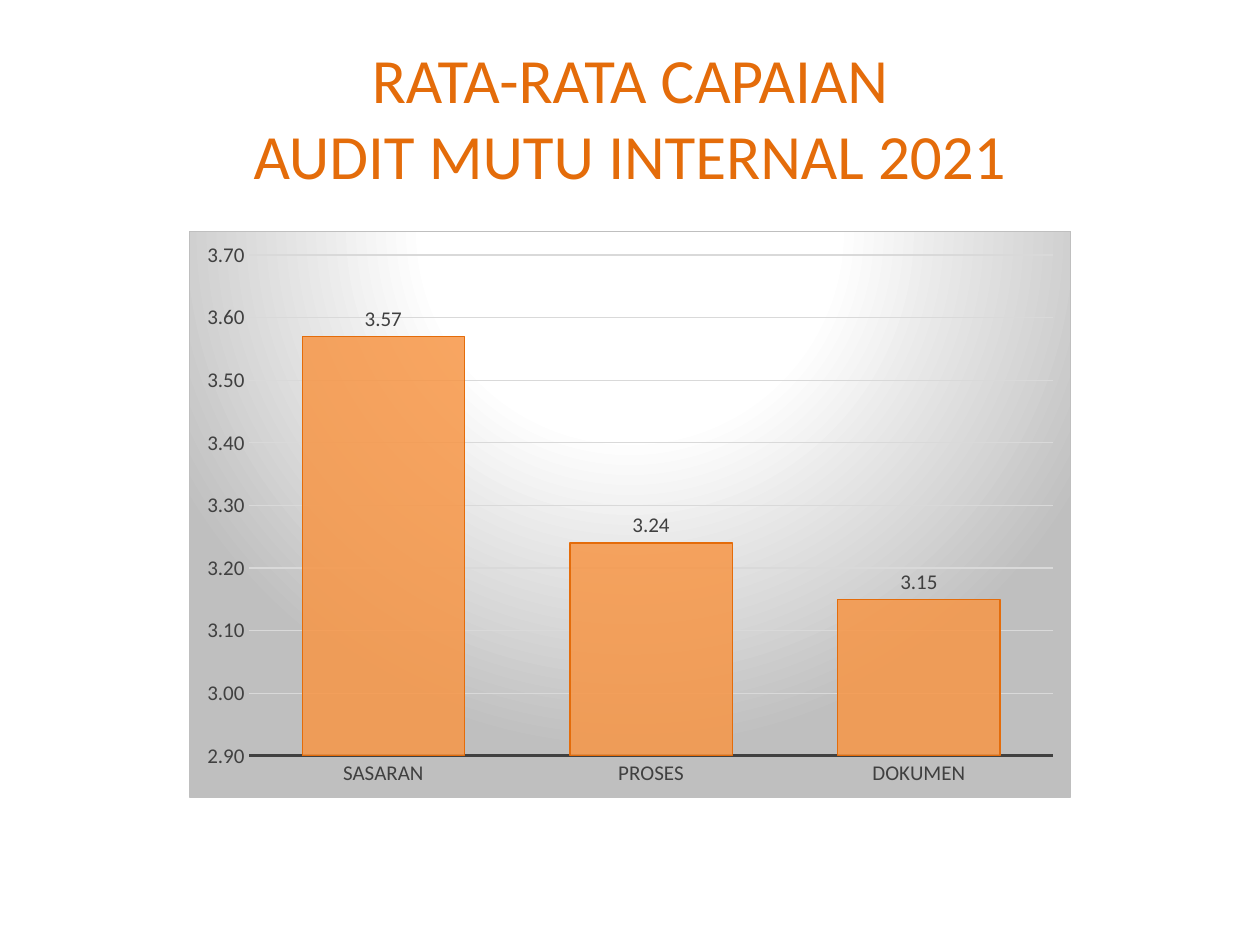
from copy import deepcopy
from lxml import etree
from pptx import Presentation
from pptx.chart.data import CategoryChartData
from pptx.dml.color import RGBColor
from pptx.enum.chart import XL_CHART_TYPE, XL_LABEL_POSITION, XL_TICK_MARK
from pptx.enum.text import MSO_ANCHOR, PP_ALIGN
from pptx.util import Cm, Pt

COLUMN = XL_CHART_TYPE.COLUMN_CLUSTERED
ABOVE = XL_LABEL_POSITION.OUTSIDE_END
NO_TICK = XL_TICK_MARK.NONE
MIDDLE = MSO_ANCHOR.MIDDLE
CENTER = PP_ALIGN.CENTER
HUES = {"title": "E46C0A", "bar": "F79646", "text": "404040",
        "grid": "D9D9D9", "edge": "BFBFBF", "glow": "FFFFFF"}
NS = "http://schemas.openxmlformats.org/drawingml/2006/main"
CNS = "http://schemas.openxmlformats.org/drawingml/2006/chart"


def style(font, size, hue):
    for name, value in {"name": "Calibri", "size": Pt(size), "bold": False}.items():
        setattr(font, name, value)
    font.color.rgb = RGBColor.from_string(HUES[hue])


def stroke(line, hue, width):
    line.color.rgb = RGBColor.from_string(HUES[hue])
    line.width = Pt(width)


deck = Presentation()
deck.slide_width, deck.slide_height = Cm(25.4), Cm(19.05)
slide = deck.slides.add_slide(deck.slide_layouts[5])

title = slide.shapes.title
place = {"left": Cm(1.27), "top": Cm(0.76), "width": Cm(22.86), "height": Cm(3.18)}
for name, value in place.items():
    setattr(title, name, value)
frame = title.text_frame
frame.text = "RATA-RATA CAPAIAN\vAUDIT MUTU INTERNAL 2021"
frame.vertical_anchor = MIDDLE
para = frame.paragraphs[0]
para.alignment = CENTER
for run in para.runs:
    style(run.font, 36, "title")
para._p.find(f"{{{NS}}}br").append(deepcopy(para.runs[0]._r.rPr))

data = CategoryChartData(number_format="0.00")
data.categories = ["SASARAN", "PROSES", "DOKUMEN"]
data.add_series("Series 1", [3.57, 3.24, 3.15])
chart = slide.shapes.add_chart(
    COLUMN, Cm(3.81), Cm(4.65), Cm(17.78), Cm(11.43), data).chart
chart.has_legend = chart.has_title = False
style(chart.font, 12, "text")

cats, vals = chart.category_axis, chart.value_axis
for axis in (cats, vals):
    axis.major_tick_mark = axis.minor_tick_mark = NO_TICK
    style(axis.tick_labels.font, 12, "text")
stroke(cats.format.line, "text", 1.5)
vals.format.line.fill.background()
scale = {"minimum_scale": 2.9, "maximum_scale": 3.7, "major_unit": 0.1}
for name, value in scale.items():
    setattr(vals, name, value)
stroke(vals.major_gridlines.format.line, "grid", 0.75)
vals.tick_labels.number_format = "0.00"
vals.tick_labels.number_format_is_linked = False

plot = chart.plots[0]
plot.gap_width = 65
plot.vary_by_categories = False
bars = plot.series[0]
bars.format.fill.solid()
bars.format.fill.fore_color.rgb = RGBColor.from_string(HUES["bar"])
tint = bars.format.fill._xPr.find(f".//{{{NS}}}srgbClr")
etree.SubElement(tint, f"{{{NS}}}alpha", val="85000")
stroke(bars.format.line, "title", 0.75)
labels = bars.data_labels
marks = {"show_value": True, "number_format": "0.00",
         "number_format_is_linked": False, "position": ABOVE}
for name, value in marks.items():
    setattr(labels, name, value)
style(labels.font, 12, "text")

stops = "".join(
    f'<a:gs pos="{pos * 1000}"><a:srgbClr val="{HUES[hue]}"/></a:gs>'
    for pos, hue in ((0, "glow"), (39, "glow"), (100, "edge")))
back = etree.fromstring(
    f'<c:spPr xmlns:c="{CNS}" xmlns:a="{NS}"><a:gradFill><a:gsLst>{stops}</a:gsLst>'
    '<a:path path="circle"><a:fillToRect l="50000" t="-80000" r="50000" b="180000"/>'
    '</a:path></a:gradFill><a:ln w="9525"><a:solidFill>'
    f'<a:srgbClr val="{HUES["edge"]}"/></a:solidFill></a:ln></c:spPr>')
chart._chartSpace.find(f"{{{CNS}}}chart").addnext(back)

deck.save("out.pptx")
